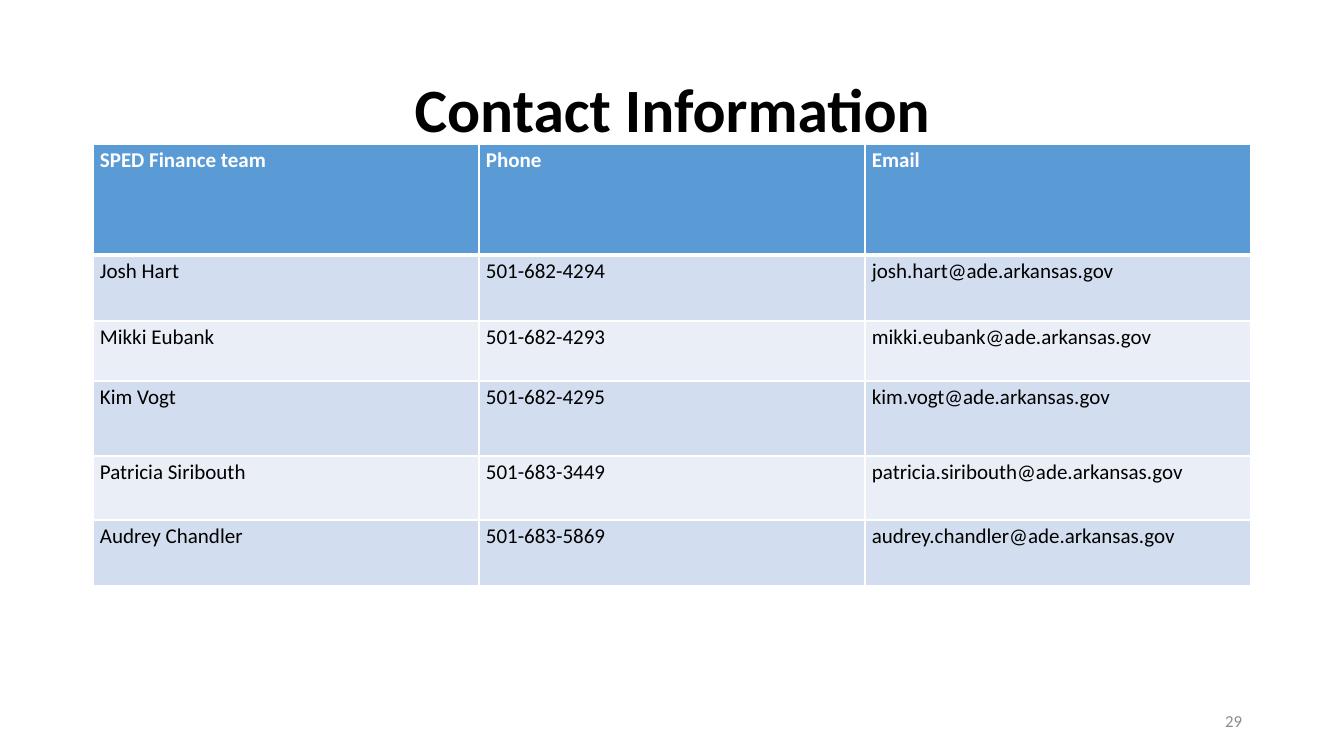
from dataclasses import dataclass

import pptx
import pptx.dml.color
import pptx.enum.text
import pptx.oxml
import pptx.oxml.ns
import pptx.util

EMU_PER_PX = 914400 / 100.8
FONT = "Calibri"
WHITE, BLACK, GREY = "FFFFFF", "000000", "8C8C8C"
HEADER_BLUE, BAND_DARK, BAND_LIGHT = "5B9BD5", "D2DEEF", "EAEFF7"
TABLE_LEFT, TABLE_TOP, COLUMN_WIDTH = 93, 144, 386
HEADINGS = ("SPED Finance team", "Phone", "Email")
HEADER_HEIGHT = 111
ALIGN = pptx.enum.text.PP_ALIGN
MIDDLE = pptx.enum.text.MSO_ANCHOR.MIDDLE


@dataclass(frozen=True)
class Contact:
    name: str
    phone: str
    email: str
    height: int


CONTACTS = (
    Contact("Josh Hart", "501-682-4294", "josh.hart@ade.arkansas.gov", 66),
    Contact("Mikki Eubank", "501-682-4293", "mikki.eubank@ade.arkansas.gov", 60),
    Contact("Kim Vogt", "501-682-4295", "kim.vogt@ade.arkansas.gov", 75),
    Contact("Patricia Siribouth", "501-683-3449", "patricia.siribouth@ade.arkansas.gov", 64),
    Contact("Audrey Chandler", "501-683-5869", "audrey.chandler@ade.arkansas.gov", 66),
)


def px(length: int) -> pptx.util.Emu:
    return pptx.util.Emu(round(length * EMU_PER_PX))


def rgb(colour: str) -> pptx.dml.color.RGBColor:
    return pptx.dml.color.RGBColor.from_string(colour)


def write(tf, text: str, *, size: int, colour: str = BLACK, bold: bool = False,
          align=ALIGN.LEFT, spacing: float = 1.0) -> None:
    p = tf.paragraphs[0]
    p.alignment = align
    p.line_spacing = spacing
    r = p.add_run()
    r.text = text
    r.font.name = FONT
    r.font.size = pptx.util.Pt(size)
    r.font.bold = bold
    r.font.color.rgb = rgb(colour)


def set_borders(cell, *, top: int = 1, bottom: int = 1) -> None:
    """Draw white cell borders with widths in points."""
    properties = cell._tc.get_or_add_tcPr()
    for side, width in (("L", 1), ("R", 1), ("T", top), ("B", bottom)):
        properties.append(pptx.oxml.parse_xml(
            f'<a:ln{side} {pptx.oxml.ns.nsdecls("a")} w="{pptx.util.Pt(width)}">'
            f'<a:solidFill><a:srgbClr val="{WHITE}"/></a:solidFill></a:ln{side}>'))


def add_title(s, text: str) -> None:
    sp = s.shapes.title
    sp.left, sp.top, sp.width, sp.height = px(93), px(40), px(1159), px(146)
    sp.text_frame.vertical_anchor = MIDDLE
    write(sp.text_frame, text, size=44, bold=True, align=ALIGN.CENTER, spacing=0.9)


def add_contact_table(s, contacts: tuple[Contact, ...]) -> None:
    rows = [HEADINGS] + [(c.name, c.phone, c.email) for c in contacts]
    heights = [HEADER_HEIGHT] + [c.height for c in contacts]
    table = s.shapes.add_table(
        len(rows), len(HEADINGS), px(TABLE_LEFT), px(TABLE_TOP),
        px(COLUMN_WIDTH * len(HEADINGS)), px(sum(heights))).table
    for column in table.columns:
        column.width = px(COLUMN_WIDTH)
    for i, (texts, height) in enumerate(zip(rows, heights)):
        table.rows[i].height = px(height)
        header = i == 0
        band = BAND_DARK if i % 2 else BAND_LIGHT
        for j, text in enumerate(texts):
            cell = table.cell(i, j)
            cell.margin_left = cell.margin_right = px(7)
            cell.margin_top = cell.margin_bottom = px(4)
            set_borders(cell, top=3 if i == 1 else 1, bottom=3 if header else 1)
            cell.fill.solid()
            cell.fill.fore_color.rgb = rgb(HEADER_BLUE if header else band)
            write(cell.text_frame, text, size=15, bold=header,
                  colour=WHITE if header else BLACK)


def add_page_number(s, number: str) -> None:
    sp = s.shapes.add_textbox(px(950), px(701), px(302), px(40))
    tf = sp.text_frame
    tf.word_wrap = True
    tf.vertical_anchor = MIDDLE
    write(tf, number, size=12, colour=GREY, align=ALIGN.RIGHT)


def main() -> None:
    prs = pptx.Presentation()
    prs.slide_width, prs.slide_height = px(1344), px(756)
    s = prs.slides.add_slide(prs.slide_layouts.get_by_name("Title Only"))
    add_title(s, "Contact Information")
    add_contact_table(s, CONTACTS)
    add_page_number(s, "29")
    prs.save("out.pptx")


if __name__ == "__main__":
    main()
